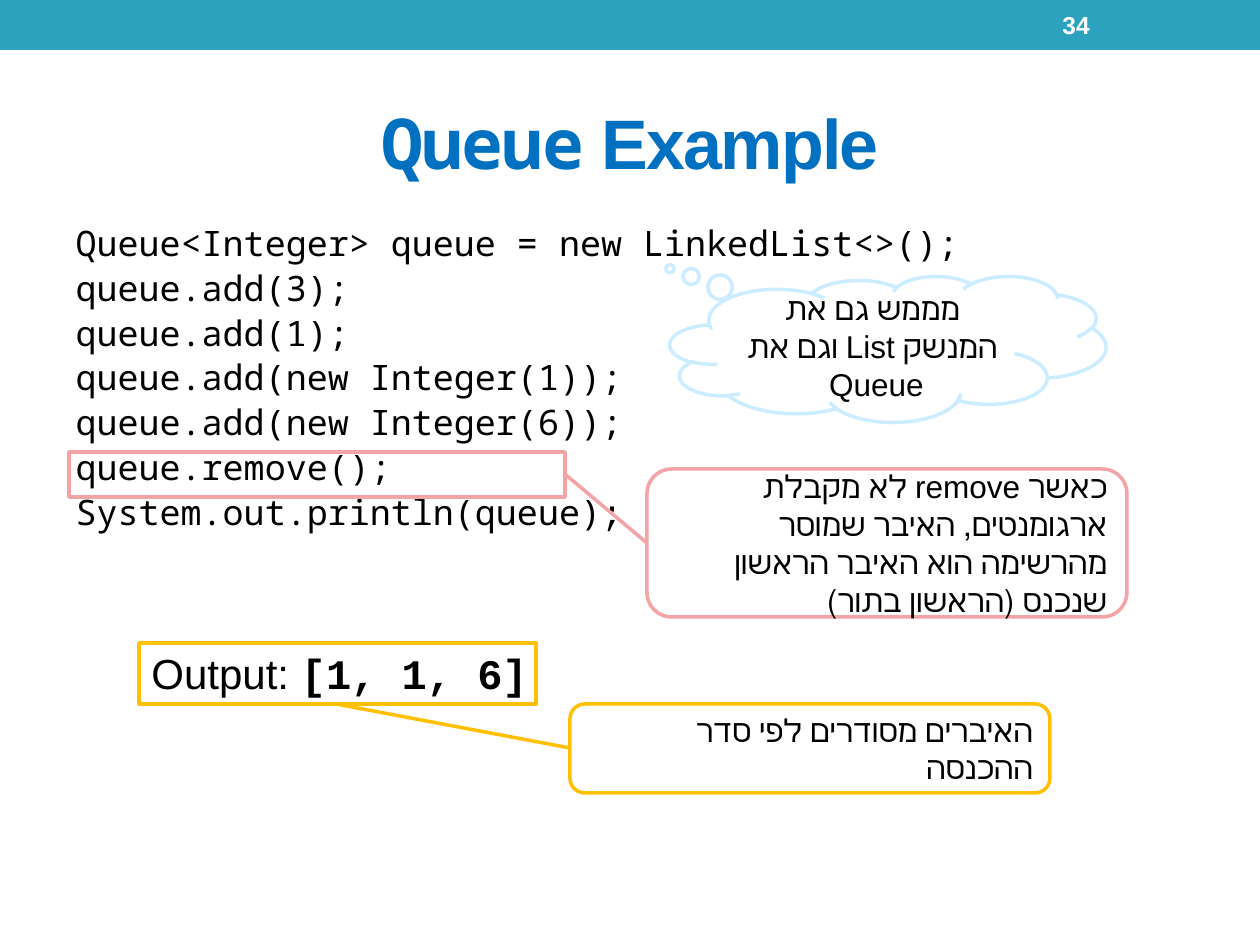
import dataclasses
import typing

import pptx
import pptx.dml.color
import pptx.enum.shapes
import pptx.enum.text
import pptx.oxml.ns
import pptx.util
from lxml import etree

SCALE = 914400 / 126  # EMU in one px
KIND = pptx.enum.shapes.MSO_SHAPE
ALIGN = pptx.enum.text.PP_ALIGN
MID = pptx.enum.text.MSO_ANCHOR.MIDDLE
QN = pptx.oxml.ns.qn


@dataclasses.dataclass(frozen=True)
class Theme:
    bar: str = "2DA2BF"
    title: str = "0070C0"
    ink: str = "000000"
    white: str = "FFFFFF"
    pink: str = "F2A4A7"
    gold: str = "FFC000"
    sky: str = "CCECFF"
    sans: str = "Arial"
    mono: str = "Noto Sans Mono"
    fixed: str = "Courier New"
    head: int = 40
    out: int = 24
    code: int = 20
    note: int = 18
    num: int = 14
    line: int = 2


THEME = Theme()


class Box(typing.NamedTuple):
    left: int
    top: int
    width: int
    height: int


@dataclasses.dataclass(frozen=True)
class Note:
    kind: KIND
    box: Box
    color: str
    text: str = ""
    align: ALIGN = ALIGN.RIGHT
    tail: tuple[float, ...] = ()


class Link(typing.NamedTuple):
    start: tuple[int, int]
    end: tuple[int, int]
    color: str


NOTES = [
    Note(KIND.RECTANGLE, Box(69, 452, 496, 45), THEME.pink),
    Note(KIND.ROUNDED_RECTANGLE, Box(647, 469, 480, 148), THEME.pink,
         "כאשר remove לא מקבלת ארגומנטים, האיבר שמוסר מהרשימה הוא האיבר הראשון שנכנס (הראשון בתור)"),
    Note(KIND.CLOUD_CALLOUT, Box(670, 276, 436, 146), THEME.sky,
         "מממש גם את המנשק List וגם את Queue ", ALIGN.CENTER, (-0.5, -0.55)),
    Note(KIND.ROUNDED_RECTANGLE, Box(570, 704, 480, 89), THEME.gold,
         "האיברים מסודרים לפי סדר ההכנסה"),
    Note(KIND.RECTANGLE, Box(139, 643, 397, 61), THEME.gold),
]
LINKS = [
    Link((566, 475), (647, 543), THEME.pink),
    Link((336, 704), (570, 748), THEME.gold),
]
CODE = [
    "Queue<Integer> queue = new LinkedList<>();",
    "queue.add(3);",
    "queue.add(1);",
    "queue.add(new Integer(1));",
    "queue.add(new Integer(6));",
    "queue.remove();",
    "System.out.println(queue);",
]


def emu(px: float) -> int:
    return round(px * SCALE)


def rgb(code: str) -> pptx.dml.color.RGBColor:
    return pptx.dml.color.RGBColor.from_string(code)


def style(font, size: int, color: str, face: str = "", bold: bool = False) -> None:
    font.size = pptx.util.Pt(size)
    font.color.rgb = rgb(color)
    font.bold = bold
    if face:
        font.name = face


def place(shape, box: Box) -> None:
    shape.left, shape.top, shape.width, shape.height = map(emu, box)


def add_text(slide, box: Box):
    shape = slide.shapes.add_textbox(*map(emu, box))
    shape.text_frame.word_wrap = True
    return shape.text_frame


def add_runs(para, runs: list[tuple[str, str]]) -> list:
    made = []
    for text, face in runs:
        run = para.add_run()
        run.text, run.font.name = text, face
        made.append(run)
    return made


def add_note(slide, note: Note) -> None:
    shape = slide.shapes.add_shape(note.kind, *map(emu, note.box))
    shape.shadow.inherit = False
    shape.fill.background()
    shape.line.color.rgb = rgb(note.color)
    shape.line.width = pptx.util.Pt(THEME.line)
    for i, value in enumerate(note.tail):
        shape.adjustments[i] = value
    if note.text:
        frame = shape.text_frame
        frame.vertical_anchor = MID
        para = frame.paragraphs[0]
        para.text, para.alignment = note.text, note.align
        para._p.get_or_add_pPr().set("rtl", "1")
        style(para.font, THEME.note, THEME.ink, THEME.sans)


def add_link(slide, link: Link) -> None:
    ends = map(emu, (*link.start, *link.end))
    line = slide.shapes.add_connector(pptx.enum.shapes.MSO_CONNECTOR.STRAIGHT, *ends)
    line.line.color.rgb = rgb(link.color)
    line.line.width = pptx.util.Pt(THEME.line)
    etree.SubElement(line._element.spPr, QN("a:effectLst"))


def fill_title(shape) -> None:
    place(shape, Box(63, 73, 1134, 136))
    shape.text_frame.vertical_anchor = MID
    para = shape.text_frame.paragraphs[0]
    para.alignment = ALIGN.CENTER
    style(para.font, THEME.head, THEME.title, bold=True)
    for run in add_runs(para, [("Queue", THEME.mono), (" Example", THEME.sans)]):
        run._r.get_or_add_rPr().set("spc", "-100")


def fill_code(shape) -> None:
    place(shape, Box(63, 220, 1134, 672))
    frame = shape.text_frame
    frame.text = "\n".join(CODE)
    for para in frame.paragraphs:
        para.line_spacing = 0.9
        para.space_before = pptx.util.Pt(THEME.code * 0.2)
        style(para.font, THEME.code, THEME.ink, THEME.mono)
        props = para._p.get_or_add_pPr()
        props.set("marL", str(emu(25)))
        props.set("indent", str(emu(-25)))
        props.find(QN("a:defRPr")).addprevious(etree.Element(QN("a:buNone")))
    # The last semicolon has its own face
    last = frame.paragraphs[-1]
    last.runs[0].text = CODE[-1][:-1]
    add_runs(last, [(";", THEME.fixed)])


def main() -> None:
    deck = pptx.Presentation()
    deck.slide_width, deck.slide_height = emu(1260), emu(945)
    slide = deck.slides.add_slide(deck.slide_layouts[1])

    # Top bar and page number
    bar = slide.shapes.add_shape(KIND.RECTANGLE, *map(emu, Box(0, 0, 1260, 50)))
    bar.shadow.inherit = False
    bar.fill.solid()
    bar.fill.fore_color.rgb = rgb(THEME.bar)
    bar.line.fill.background()
    frame = add_text(slide, Box(1050, 2, 147, 45))
    frame.vertical_anchor = MID
    frame.text = "34"
    style(frame.paragraphs[0].font, THEME.num, THEME.white, THEME.sans, True)

    # Title and code
    fill_title(slide.shapes.title)
    fill_code(slide.placeholders[1])

    # Program output
    para = add_text(slide, Box(139, 641, 496, 63)).paragraphs[0]
    style(para.font, THEME.out, THEME.ink)
    runs = add_runs(para, [("Output: ", THEME.sans), ("[1, 1, 6]", THEME.fixed)])
    runs[1].font.bold = True

    # Frames, notes and their links
    for note in NOTES:
        add_note(slide, note)
    for link in LINKS:
        add_link(slide, link)

    deck.save("out.pptx")


if __name__ == "__main__":
    main()
